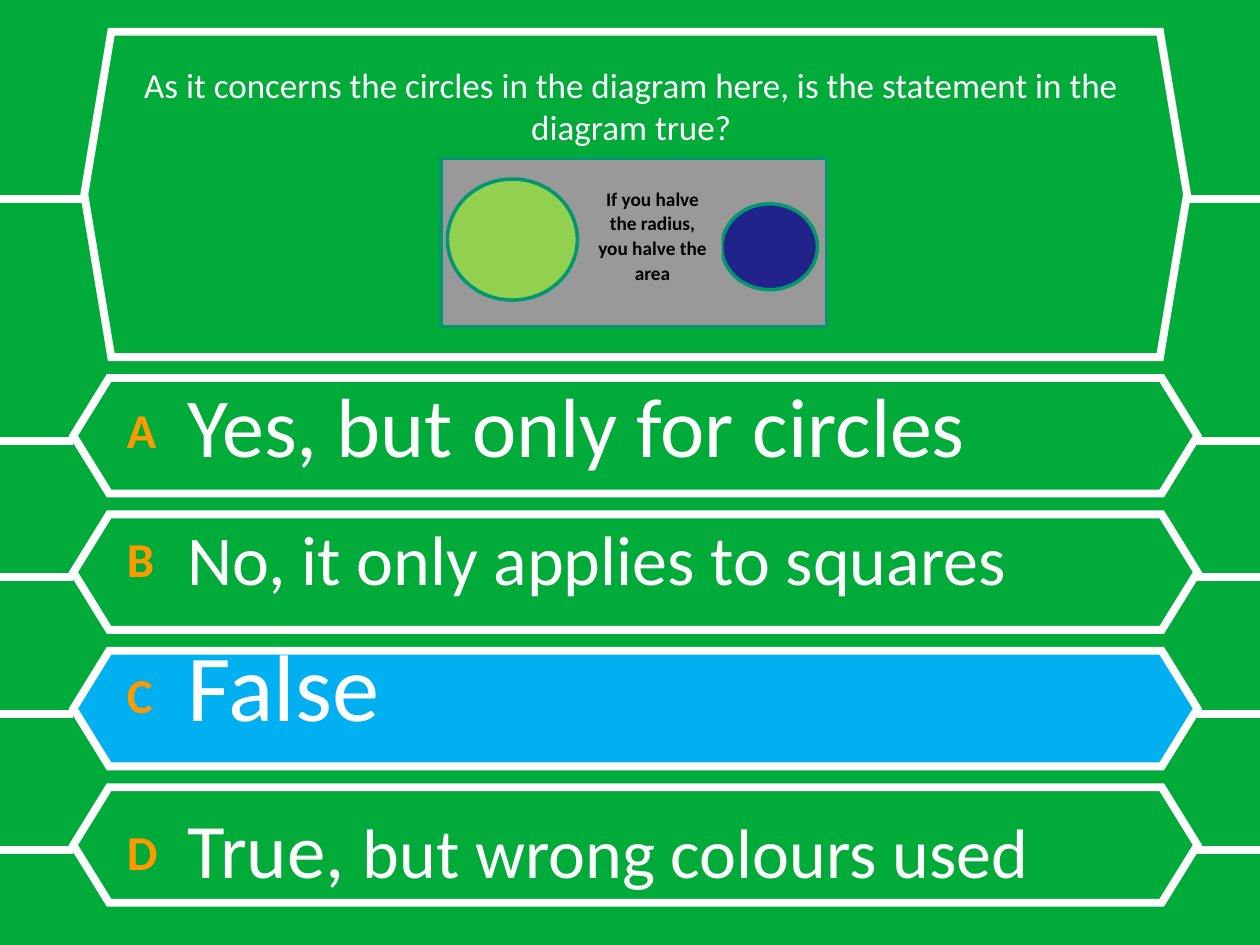
from pptx import Presentation
from pptx.dml.color import RGBColor
from pptx.enum.shapes import MSO_CONNECTOR, MSO_SHAPE
from pptx.enum.text import MSO_ANCHOR, PP_ALIGN
from pptx.oxml.ns import qn
from pptx.util import Cm, Pt
from lxml import etree

HEX, OVAL, RECT = MSO_SHAPE.HEXAGON, MSO_SHAPE.OVAL, MSO_SHAPE.RECTANGLE
LINE = MSO_CONNECTOR.STRAIGHT
CENTER, LEFT = PP_ALIGN.CENTER, PP_ALIGN.LEFT
MIDDLE, TOP = MSO_ANCHOR.MIDDLE, MSO_ANCHOR.TOP

GREEN = RGBColor(0x00, 0xAB, 0x39)
WHITE = RGBColor(0xFF, 0xFF, 0xFF)
BLACK = RGBColor(0x00, 0x00, 0x00)
BLUE = RGBColor(0x00, 0xB0, 0xF0)
ORANGE = RGBColor(0xFF, 0x99, 0x00)
GREY = RGBColor(0x99, 0x99, 0x99)
TEAL = RGBColor(0x00, 0x97, 0x71)
LIME = RGBColor(0x92, 0xD0, 0x50)
NAVY = RGBColor(0x22, 0x22, 0x8B)

WIDE, HIGH = 25.4, 19.05  # slide size in cm

# letter, space before in points, (text, size) parts
ANSWERS = [
    ("A", 0, [("Yes, but only for circles", 48)]),
    ("B", 16, [("No, it only applies to squares", 40)]),
    ("C", 14, [("False", 54)]),
    ("D", 31, [("True, ", 44), ("but wrong colours used", 40)]),
]
CHOSEN = "C"


def add_run(par, text, size=20, color=WHITE, bold=False, raised=0):
    run = par.add_run()
    run.text = text
    font = run.font
    font.name, font.size, font.bold = "Calibri", Pt(size), bold
    font.color.rgb = color
    if raised:
        font._element.set("baseline", str(raised * 1000))


def set_frame(shape, anchor, align):
    frame = shape.text_frame
    frame.word_wrap = True
    frame.vertical_anchor = anchor
    frame.paragraphs[0].alignment = align
    return frame


def add_form(slide, kind, box, fill=None, line=None, width=2):
    form = slide.shapes.add_shape(kind, *map(Cm, box))
    form.shadow.inherit = False
    for part, color in ((form.fill, fill), (form.line.fill, line)):
        if color is None:
            part.background()
        else:
            part.solid()
            part.fore_color.rgb = color
    if line is not None:
        form.line.width = Pt(width)
        # Sharp corners
        edge = form._element.spPr.find(qn("a:ln"))
        etree.SubElement(edge, qn("a:miter"), lim="800000")
    return form


def add_frame(slide, box, adjust, drop, fill=None):
    """Hexagon with a line from each side to the slide edge."""
    left, top, width, height = box
    form = add_form(slide, HEX, box, fill, WHITE, 4.5)
    form.adjustments[0] = adjust
    y = Cm(top + drop)
    for start, end in ((left, 0), (WIDE, left + width)):
        rule = slide.shapes.add_connector(LINE, Cm(start), y, Cm(end), y)
        rule.line.color.rgb = WHITE
        rule.line.width = Pt(4.5)
        etree.SubElement(rule._element.spPr, qn("a:effectLst"))


def add_figure(slide, box):
    """Two circles with a statement between them."""
    left, top = box[:2]
    add_form(slide, RECT, box, GREY, TEAL)
    add_form(slide, OVAL, (left + 0.13, top + 0.41, 2.62, 2.44), LIME, TEAL)
    add_form(slide, OVAL, (left + 5.66, top + 0.91, 1.93, 1.73), NAVY, TEAL)
    label = add_form(slide, RECT, (left + 2.87, top + 0.41, 2.79, 2.24), GREY)
    par = set_frame(label, MIDDLE, CENTER).paragraphs[0]
    par.line_spacing, par.space_after = 1.07, Pt(8)
    add_run(par, "If you halve the radius, you halve the area",
            size=11, color=BLACK, bold=True)


def add_question(slide, box):
    left, top = box[:2]
    add_frame(slide, box, 0.083, 3.38)
    title = slide.shapes.add_textbox(Cm(left + 0.33), Cm(top + 0.44),
                                     Cm(21.39), Cm(2.11))
    par = set_frame(title, MIDDLE, CENTER).paragraphs[0]
    add_run(par, "As it concerns the circles in the diagram here, "
                 "is the statement in the diagram true?")
    add_figure(slide, (left + 7.19, top + 2.56, 7.77, 3.38))


def add_answers(slide, box, step):
    left, top, width, height = box
    for i, (letter, _, _) in enumerate(ANSWERS):
        row = (left, top + i * step, width, height)
        add_frame(slide, row, 0.309, 1.27, BLUE if letter == CHOSEN else None)

    # All answers share one text box with a hanging indent
    body = slide.shapes.add_textbox(Cm(left + 0.83), Cm(top - 0.22),
                                    Cm(21.16), Cm(11))
    frame = set_frame(body, TOP, LEFT)
    for i, (letter, gap, parts) in enumerate(ANSWERS):
        par = frame.add_paragraph() if i else frame.paragraphs[0]
        par.space_before = Pt(gap)
        props = par._p.get_or_add_pPr()
        props.set("marL", str(Cm(1.22)))
        props.set("indent", str(Cm(-1.22)))
        add_run(par, letter + "\t", size=48, color=ORANGE, bold=True, raised=10)
        for text, size in parts:
            add_run(par, text, size=size)


def main():
    deck = Presentation()
    deck.slide_width, deck.slide_height = Cm(WIDE), Cm(HIGH)
    slide = deck.slides.add_slide(deck.slide_layouts[6])
    slide.background.fill.solid()
    slide.background.fill.fore_color.rgb = GREEN
    add_question(slide, (1.7, 0.64, 22.23, 6.56))
    add_answers(slide, (1.48, 7.62, 22.66, 2.33), 2.75)
    deck.save("out.pptx")


if __name__ == "__main__":
    main()
